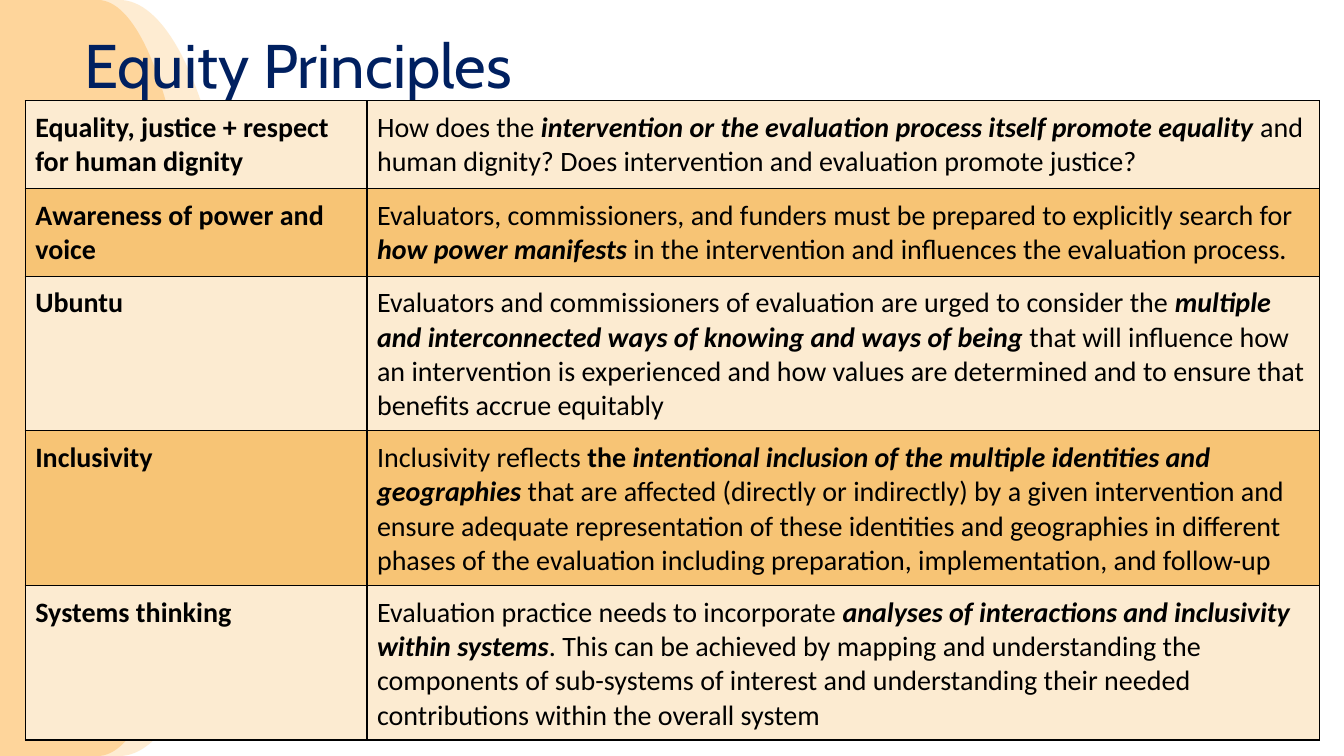
from lxml import etree
from pptx import Presentation
from pptx import util as u
from pptx.dml.color import RGBColor
from pptx.enum import shapes, text
from pptx.oxml import ns

PX = 9144
COLORS = {
    "orange": "FEAF3E",
    "navy": "002060",
    "black": "000000",
    "light": "FCEBD1",
    "dark": "F7C475",
}
COLUMNS = [339, 945]
ROW_HEIGHTS = [87, 87, 153, 153, 153]
PRINCIPLES = [
    ("Equality, justice + respect for human dignity", [
        ("How does the ", ""),
        ("intervention or the evaluation process itself promote equality ", "bi"),
        ("and human dignity? Does intervention and evaluation promote justice?", ""),
    ]),
    ("Awareness of power and voice", [
        ("Evaluators, commissioners, and funders must be prepared to explicitly "
         "search for ", ""),
        ("how power manifests ", "bi"),
        ("in the intervention and influences the evaluation process.", ""),
    ]),
    ("Ubuntu", [
        ("Evaluators and commissioners of evaluation are urged to consider the ", ""),
        ("multiple and interconnected ways of knowing and ways of being", "bi"),
        (" that will influence how an intervention is experienced and how values "
         "are determined and to ensure that benefits accrue equitably", ""),
    ]),
    ("Inclusivity", [
        ("Inclusivity reflects ", ""),
        ("the ", "b"),
        ("intentional inclusion of the multiple identities and geographies ", "bi"),
        ("that are affected (directly or indirectly) by a given intervention and "
         "ensure adequate representation of these identities and geographies in "
         "different phases of the evaluation including preparation, "
         "implementation, and follow-up", ""),
    ]),
    ("Systems thinking", [
        ("Evaluation practice needs to incorporate ", ""),
        ("analyses of interactions and inclusivity within systems", "bi"),
        (". This can be achieved by mapping and understanding the components of "
         "sub-systems of interest and understanding their needed contributions "
         "within the overall system", ""),
    ]),
]


def px(n):
    """Turn px into EMU."""
    return u.Emu(n * PX)


def rgb(name):
    """Look up a named colour."""
    return RGBColor.from_string(COLORS[name])


def set_font(p, name, size, color):
    """Set the font shared by all runs of a paragraph."""
    p.font.name = name
    p.font.size = u.Pt(size)
    p.font.color.rgb = rgb(color)


def add_curve(s, x, width, opacity):
    """Add a translucent rounded panel as tall as the slide."""
    sp = s.shapes.add_shape(
        shapes.MSO_SHAPE.FLOWCHART_DELAY, px(x), 0, px(width), px(750))
    sp.shadow.inherit = False
    sp.fill.solid()
    sp.fill.fore_color.rgb = rgb("orange")
    sp.line.fill.background()
    clr = sp.fill._xPr.find(".//" + ns.qn("a:srgbClr"))
    etree.SubElement(clr, ns.qn("a:alpha"), val=str(opacity * 1000))


def add_title(s, title):
    """Add the slide title."""
    sp = s.shapes.add_textbox(px(74), px(17), px(1150), px(103))
    tf = sp.text_frame
    tf.word_wrap = True
    tf.vertical_anchor = text.MSO_ANCHOR.MIDDLE
    p = tf.paragraphs[0]
    p.text = title
    p.line_spacing = 0.9
    set_font(p, "Cabin", 44, "navy")


def add_borders(cell):
    """Draw a thin black line on each side of a cell."""
    tc_pr = cell._tc.get_or_add_tcPr()
    for i, side in enumerate(("lnL", "lnR", "lnT", "lnB")):
        ln = etree.Element(ns.qn(f"a:{side}"), w=str(u.Pt(1)))
        fill = etree.SubElement(ln, ns.qn("a:solidFill"))
        etree.SubElement(fill, ns.qn("a:srgbClr"), val=COLORS["black"])
        tc_pr.insert(i, ln)


def fill_cell(cell, runs, color):
    """Write styled runs into a filled, bordered cell."""
    cell.fill.solid()
    cell.fill.fore_color.rgb = rgb(color)
    cell.margin_left = cell.margin_right = px(10)
    cell.margin_top = cell.margin_bottom = px(10)
    add_borders(cell)
    p = cell.text_frame.paragraphs[0]
    set_font(p, "Calibri", 20, "black")
    for content, style in runs:
        r = p.add_run()
        r.text = content
        r.font.bold = "b" in style
        r.font.italic = "i" in style


def add_principles(s):
    """Add the table of principles with alternating row fills."""
    table = s.shapes.add_table(
        len(PRINCIPLES), len(COLUMNS), px(25), px(100),
        px(sum(COLUMNS)), px(sum(ROW_HEIGHTS))).table
    for column, width in zip(table.columns, COLUMNS):
        column.width = px(width)
    for i, (name, runs) in enumerate(PRINCIPLES):
        table.rows[i].height = px(ROW_HEIGHTS[i])
        color = "dark" if i % 2 else "light"
        fill_cell(table.cell(i, 0), [(name, "b")], color)
        fill_cell(table.cell(i, 1), runs, color)


def main():
    """Build and save the slide."""
    prs = Presentation()
    prs.slide_width, prs.slide_height = px(1333), px(750)
    s = prs.slides.add_slide(prs.slide_layouts[6])
    add_curve(s, 0, 237, 23)
    add_curve(s, -2, 198, 37)
    add_title(s, "Equity Principles")
    add_principles(s)
    prs.save("out.pptx")


if __name__ == "__main__":
    main()
